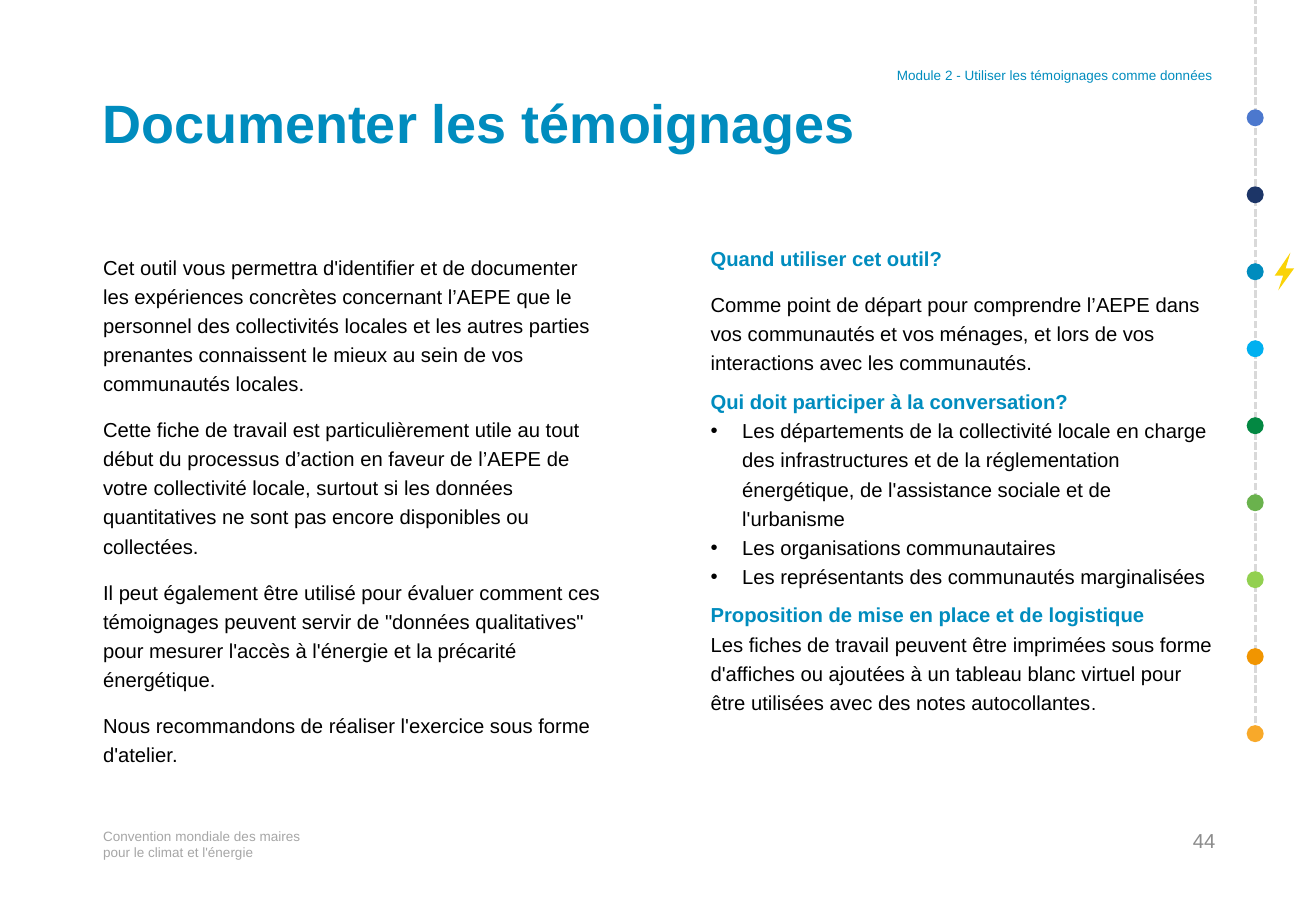
from dataclasses import dataclass
from typing import Any

from lxml.etree import SubElement
from pptx import Presentation
from pptx.dml.color import RGBColor
from pptx.enum.dml import MSO_LINE
from pptx.enum.shapes import MSO_CONNECTOR, MSO_SHAPE
from pptx.enum.text import MSO_ANCHOR, MSO_AUTO_SIZE, PP_ALIGN
from pptx.oxml.ns import qn
from pptx.util import Inches, Pt

FONT = "Arial"
BLUE = RGBColor(0x00, 0x8C, 0xBE)
BLACK = RGBColor(0x00, 0x00, 0x00)
SILVER = RGBColor(0xA6, 0xA6, 0xA6)
GREY = RGBColor(0x8C, 0x8C, 0x8C)
PALE = RGBColor(0xD9, 0xD9, 0xD9)
YELLOW = RGBColor(0xFA, 0xD3, 0x07)
DOTS = [
    RGBColor(0x4C, 0x78, 0xCE), RGBColor(0x1C, 0x35, 0x67), BLUE,
    RGBColor(0x00, 0xB0, 0xF0), RGBColor(0x03, 0x88, 0x42), RGBColor(0x6A, 0xB2, 0x4D),
    RGBColor(0x92, 0xD0, 0x50), RGBColor(0xF1, 0x95, 0x00), RGBColor(0xF8, 0xA9, 0x2A),
]
RAIL_X, DOT_SIZE = 10.33, 0.14
DOT_TOP, DOT_END = 0.9, 5.97
BOLT = [(10.62, 2.08), (10.49, 2.27), (10.56, 2.27),
        (10.52, 2.39), (10.65, 2.21), (10.58, 2.21)]
INDENT = 0.26


@dataclass
class Style:
    size: float
    color: RGBColor
    bold: bool = False
    lead: float = 1.0
    align: Any = PP_ALIGN.LEFT
    bullet: bool = False


@dataclass
class Para:
    text: str
    style: Style
    before: float = 0
    tail: str = ""


@dataclass
class Block:
    left: float
    top: float
    width: float
    height: float
    paras: list[Para]
    anchor: Any = MSO_ANCHOR.TOP


BODY = Style(12, BLACK, lead=1.2)
ITEM = Style(12, BLACK, lead=1.2, bullet=True)
HEAD = Style(12, BLUE, bold=True, lead=0.9)

TITLE = Block(0.74, 0.75, 9.34, 1.08, [
    Para("Documenter les témoignages", Style(32, BLUE, bold=True, lead=0.9))])
BLOCKS = [
    Block(6.66, 0.5, 3.42, 0.24, [
        Para("Module 2 - Utiliser les témoignages comme données",
             Style(8, BLUE, lead=0.9, align=PP_ALIGN.RIGHT))], MSO_ANCHOR.BOTTOM),
    Block(0.75, 2.01, 4.33, 4.76, [
        Para("Cet outil vous permettra d'identifier et de documenter les expériences "
             "concrètes concernant l’AEPE que le personnel des collectivités locales et "
             "les autres parties prenantes connaissent le mieux au sein de vos "
             "communautés locales.", BODY),
        Para("Cette fiche de travail est particulièrement utile au tout début du "
             "processus d’action en faveur de l’AEPE de votre collectivité locale, "
             "surtout si les données quantitatives ne sont pas encore disponibles ou "
             "collectées.", BODY, 10),
        Para("Il peut également être utilisé pour évaluer comment ces témoignages "
             "peuvent servir de \"données qualitatives\" pour mesurer l'accès à "
             "l'énergie et la précarité énergétique.", BODY, 10),
        Para("Nous recommandons de réaliser l'exercice sous forme d'atelier.", BODY, 10),
    ]),
    Block(5.75, 2, 4.33, 4.76, [
        Para("Quand utiliser cet outil?", HEAD),
        Para("Comme point de départ pour comprendre l’AEPE dans vos communautés et vos "
             "ménages, et lors de vos interactions avec les communautés.", BODY, 10),
        Para("Qui doit participer à la conversation?", HEAD, 10),
        Para("Les départements de la collectivité locale en charge des infrastructures "
             "et de la réglementation énergétique, de l'assistance sociale et de "
             "l'urbanisme", ITEM),
        Para("Les organisations communautaires", ITEM),
        Para("Les représentants des communautés marginalisées", ITEM),
        Para("Proposition de mise en place et de logistique", HEAD, 10),
        Para("Les fiches de travail peuvent être imprimées sous forme d'affiches ou "
             "ajoutées à un tableau blanc virtuel pour être utilisées avec des notes "
             "autocollantes", BODY, tail="."),
    ]),
    Block(0.75, 6.77, 1.83, 0.4, [
        Para("Convention mondiale des maires\vpour le climat et l'énergie",
             Style(8, SILVER))]),
    Block(9.58, 6.77, 0.52, 0.4, [Para("44", Style(12, GREY, align=PP_ALIGN.RIGHT))]),
]


def assign(target: Any, values: dict[str, Any]) -> None:
    for name, value in values.items():
        setattr(target, name, value)


def add_bullet(line: Any) -> None:
    props = line._p.get_or_add_pPr()
    props.set("marL", str(Inches(INDENT)))
    props.set("indent", str(-Inches(INDENT)))
    SubElement(props, qn("a:buFont")).set("typeface", FONT)
    SubElement(props, qn("a:buChar")).set("char", "•")


def write(frame: Any, block: Block) -> None:
    assign(frame, {"word_wrap": True, "auto_size": MSO_AUTO_SIZE.NONE,
                   "vertical_anchor": block.anchor})
    for index, para in enumerate(block.paras):
        line = frame.add_paragraph() if index else frame.paragraphs[0]
        style = para.style
        line.text = para.text
        if style.bullet:
            add_bullet(line)
        assign(line, {"alignment": style.align, "line_spacing": style.lead,
                      "space_before": Pt(para.before), "space_after": Pt(0)})
        assign(line.font, {"name": FONT, "size": Pt(style.size), "bold": style.bold})
        line.font.color.rgb = style.color
        if para.tail:
            run = line.add_run()
            run.text = para.tail
            run.font.size = Pt(style.size - 1)


def paint(shape: Any, color: RGBColor) -> None:
    shape.shadow.inherit = False
    shape.fill.solid()
    shape.fill.fore_color.rgb = color
    shape.line.fill.background()


def add_rail(shapes: Any) -> None:
    """Draw the dashed line with its column of dots."""
    rail = shapes.add_connector(MSO_CONNECTOR.STRAIGHT, Inches(RAIL_X), Inches(6.04),
                                Inches(RAIL_X), 0)
    assign(rail.line, {"width": Pt(1.5), "dash_style": MSO_LINE.SQUARE_DOT})
    rail.line.color.rgb = PALE
    SubElement(rail._element.spPr, qn("a:effectLst"))
    step = (DOT_END - DOT_TOP) / (len(DOTS) - 1)
    for index, color in enumerate(DOTS):
        dot = shapes.add_shape(MSO_SHAPE.OVAL, Inches(RAIL_X - DOT_SIZE / 2),
                               Inches(DOT_TOP + index * step),
                               Inches(DOT_SIZE), Inches(DOT_SIZE))
        paint(dot, color)


def add_bolt(shapes: Any) -> None:
    points = [(Inches(x), Inches(y)) for x, y in BOLT]
    pen = shapes.build_freeform(*points[0])
    pen.add_line_segments(points[1:], close=True)
    paint(pen.convert_to_shape(), YELLOW)


def main() -> None:
    deck = Presentation()
    assign(deck, {"slide_width": Inches(10.83), "slide_height": Inches(7.5)})
    slide = deck.slides.add_slide(deck.slide_layouts[5])
    shapes = slide.shapes
    add_rail(shapes)
    title = shapes.title
    assign(title, {side: Inches(getattr(TITLE, side))
                   for side in ("left", "top", "width", "height")})
    write(title.text_frame, TITLE)
    for block in BLOCKS:
        box = shapes.add_textbox(Inches(block.left), Inches(block.top),
                                 Inches(block.width), Inches(block.height))
        write(box.text_frame, block)
    add_bolt(shapes)
    deck.save("out.pptx")


if __name__ == "__main__":
    main()
